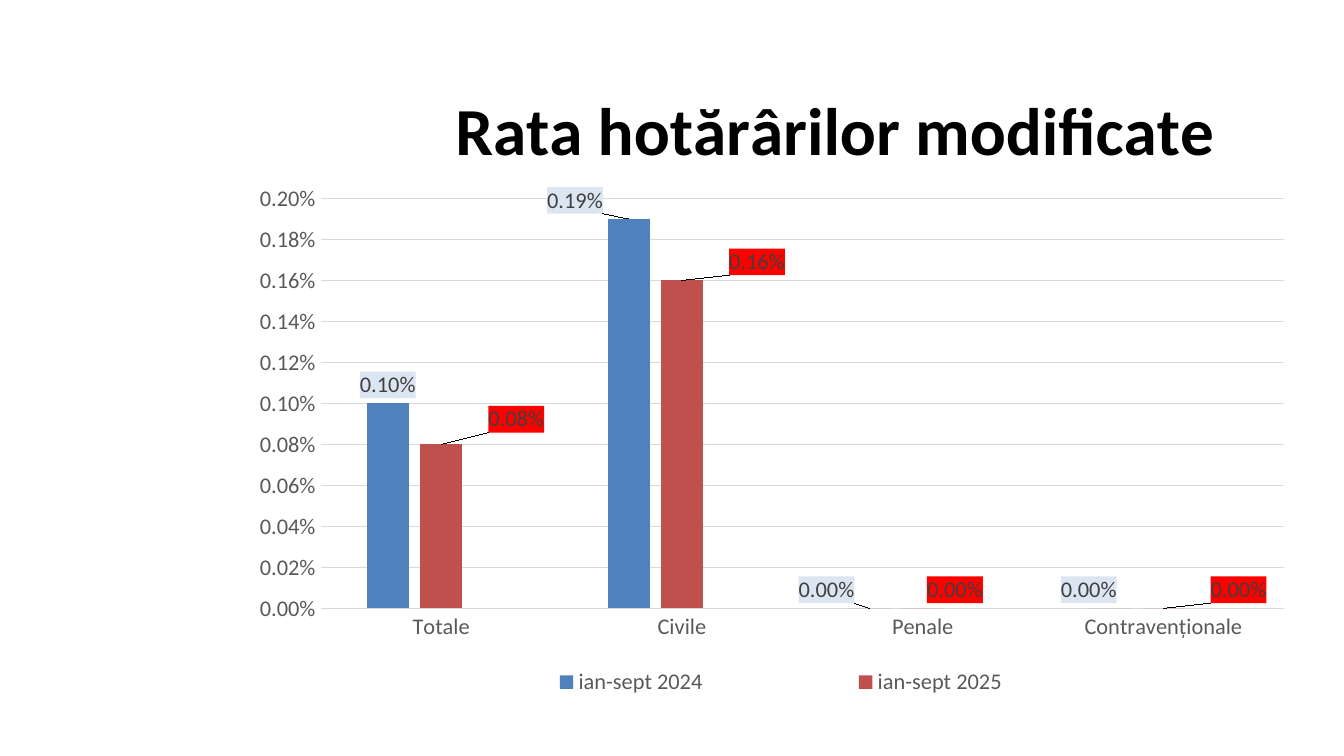
from lxml import etree
from pptx import Presentation, util as u
from pptx.chart.data import CategoryChartData
from pptx.dml.color import RGBColor
from pptx.enum import chart as c
from pptx.oxml import parse_xml
from pptx.oxml.ns import nsdecls, qn

COLORS = {
    "title": "000000", "axis": "595959", "grid": "D9D9D9", "label": "404040",
    "2024": "4F81BD", "2025": "C0504D", "empty": "9BBB59",
    "2024 label": "DCE6F2", "2025 label": "FF0000",
}


def set_layout(parent, index, **settings):
    for old in parent.findall(qn("c:layout")):
        parent.remove(old)
    layout = etree.Element(qn("c:layout"))
    manual = etree.SubElement(layout, qn("c:manualLayout"))
    for name, value in settings.items():
        etree.SubElement(manual, qn("c:" + name)).set("val", str(value))
    parent.insert(index, layout)


def set_font(font, size, color, bold=False):
    font.name = "Calibri"
    font.size = u.Pt(size)
    font.bold = bold
    font.color.rgb = RGBColor.from_string(COLORS[color])


presentation = Presentation()
presentation.slide_width = u.Cm(25.4)
presentation.slide_height = u.Cm(14.29)
slide = presentation.slides.add_slide(presentation.slide_layouts[6])

data = CategoryChartData(number_format="0.00%")
data.categories = ["Totale", "Civile", "Penale", "Contravenționale"]
data.add_series("ian-sept 2024", [0.001, 0.0019, 0, 0])
data.add_series("ian-sept 2025", [0.0008, 0.0016, 0, 0])
data.add_series("Series 3", [None] * 4)
chart = slide.shapes.add_chart(
    c.XL_CHART_TYPE.COLUMN_CLUSTERED,
    u.Cm(4.32), u.Cm(1.22), u.Cm(20.27), u.Cm(12.42), data).chart
set_font(chart.font, 10, "title")

title = chart.chart_title
title.text_frame.text = "Rata hotărârilor modificate"
set_font(title.text_frame.paragraphs[0].runs[0].font, 36, "title", True)
title.include_in_layout = False
set_layout(title._element, 1, xMode="edge", yMode="edge", x=0.2, y=0.01)

plot = chart.plots[0]
plot.gap_width = 219
plot.overlap = -27
plot.vary_by_categories = False
set_layout(chart._chartSpace.chart.plotArea, 0, layoutTarget="inner",
           xMode="edge", yMode="edge", x=0.086, y=0.204, w=0.898, h=0.624)

for axis in (chart.category_axis, chart.value_axis):
    axis.major_tick_mark = axis.minor_tick_mark = c.XL_TICK_MARK.NONE
    set_font(axis.tick_labels.font, 12, "axis")
value_axis = chart.value_axis
value_axis.minimum_scale = 0
value_axis.maximum_scale = 0.002
value_axis.major_unit = 0.0002
value_axis.tick_labels.number_format = "0.00%"
value_axis.tick_labels.number_format_is_linked = False
value_axis.format.line.fill.background()
for line in (chart.category_axis.format.line, value_axis.major_gridlines.format.line):
    line.color.rgb = RGBColor.from_string(COLORS["grid"])
    line.width = u.Pt(0.75)

label_offsets = {
    "2024": {1: (-0.05, 0), 2: (-0.04, 0), 3: (-0.02, 0)},
    "2025": {0: (0.07, -0.01), 1: (0.07, 0), 2: (0.03, 0), 3: (0.07, 0)},
    "empty": {},
}
for series, (key, offsets) in zip(plot.series, label_offsets.items()):
    series.format.fill.solid()
    series.format.fill.fore_color.rgb = RGBColor.from_string(COLORS[key])
    if key == "empty":
        continue
    labels = series.data_labels
    labels.show_value = True
    labels.number_format = "0.00%"
    labels.number_format_is_linked = False
    label_elements = [labels._element]
    for index, (x, y) in offsets.items():
        label = series.points[index].data_label
        set_font(label.font, 12, "label")
        label.position = c.XL_LABEL_POSITION.OUTSIDE_END
        element = labels._element.findall(qn("c:dLbl"))[-1]
        for old in element.findall(qn("c:spPr")):
            element.remove(old)
        set_layout(element, 1, x=x, y=y)
        element.insert(2, parse_xml(
            f'<c:numFmt {nsdecls("c")} formatCode="0.00%" sourceLinked="0"/>'))
        label_elements.append(element)
    set_font(labels.font, 12, "label")
    labels.position = c.XL_LABEL_POSITION.OUTSIDE_END
    for element in label_elements:
        element.find(qn("c:numFmt")).addnext(parse_xml(
            f'<c:spPr {nsdecls("c", "a")}><a:solidFill>'
            f'<a:srgbClr val="{COLORS[key + " label"]}"/></a:solidFill></c:spPr>'))

chart.has_legend = True
legend = chart.legend
legend.position = c.XL_LEGEND_POSITION.BOTTOM
legend.include_in_layout = False
set_font(legend.font, 12, "axis")
legend._element.insert(1, parse_xml(
    f'<c:legendEntry {nsdecls("c")}><c:idx val="2"/><c:delete val="1"/></c:legendEntry>'))
set_layout(legend._element, 2, xMode="edge", yMode="edge", x=0.17, y=0.91, w=0.69, h=0.06)

presentation.save("out.pptx")
